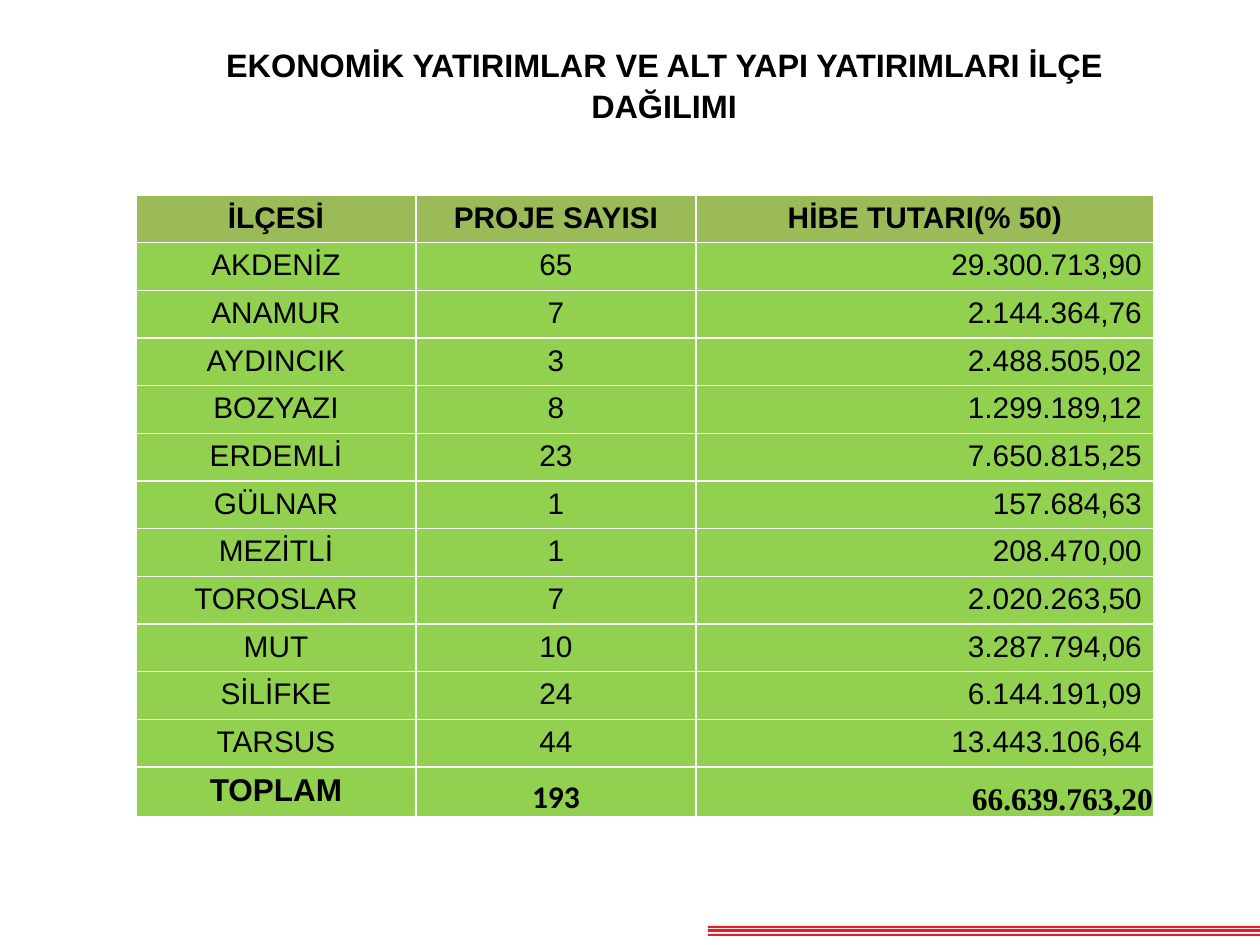
from dataclasses import dataclass

from pptx import Presentation
from pptx.dml.color import RGBColor
from pptx.enum.text import MSO_ANCHOR, PP_ALIGN
from pptx.util import Emu, Pt

CENTER, RIGHT = PP_ALIGN.CENTER, PP_ALIGN.RIGHT
TOP, BOTTOM = MSO_ANCHOR.TOP, MSO_ANCHOR.BOTTOM
BLANK_LAYOUT = 6
EMU_PER_PX = 914400 / 126


@dataclass(frozen=True)
class Theme:
    text: RGBColor = RGBColor(0x00, 0x00, 0x00)
    header_fill: RGBColor = RGBColor(0x9B, 0xBB, 0x59)
    body_fill: RGBColor = RGBColor(0x92, 0xD0, 0x50)
    stripe: RGBColor = RGBColor(0xE3, 0x1F, 0x24)
    font: str = "Arial"
    total_fonts: tuple = ("Arial", "Calibri", "Times New Roman")
    title_size: float = 18.5
    table_size: float = 17
    total_size: float = 18


THEME = Theme()

TITLE = "EKONOMİK YATIRIMLAR VE ALT YAPI YATIRIMLARI İLÇE DAĞILIMI"
HEADER = ("İLÇESİ", "PROJE SAYISI", "HİBE TUTARI(% 50)")
DISTRICTS = [
    ("AKDENİZ", "65", "29.300.713,90"),
    ("ANAMUR", "7", "2.144.364,76"),
    ("AYDINCIK", "3", "2.488.505,02"),
    ("BOZYAZI", "8", "1.299.189,12"),
    ("ERDEMLİ", "23", "7.650.815,25"),
    ("GÜLNAR", "1", "157.684,63"),
    ("MEZİTLİ", "1", "208.470,00"),
    ("TOROSLAR", "7", "2.020.263,50"),
    ("MUT", "10", "3.287.794,06"),
    ("SİLİFKE", "24", "6.144.191,09"),
    ("TARSUS", "44", "13.443.106,64"),
]
TOTAL = ("TOPLAM", "193", "66.639.763,20")


def px(length):
    return Emu(round(length * EMU_PER_PX))


def set_text(frame, text, size, font=THEME.font, bold=False, align=CENTER):
    paragraph = frame.paragraphs[0]
    paragraph.text = text
    paragraph.alignment = align
    paragraph.font.name = font
    paragraph.font.size = Pt(size)
    paragraph.font.bold = bold
    paragraph.font.color.rgb = THEME.text
    return paragraph


def add_stripes(slide, left, top, width):
    """Three thin stripes drawn as one outline shape."""
    bands = ((0, 2), (3, 3), (8, 2))  # offset and thickness
    right = left + width
    builder = slide.shapes.build_freeform(left, top, scale=EMU_PER_PX)
    for offset, thickness in bands:
        upper, lower = top + offset, top + offset + thickness
        if offset:
            builder.move_to(left, upper)
        builder.add_line_segments([(right, upper), (right, lower), (left, lower)], close=True)
    shape = builder.convert_to_shape()
    shape.shadow.inherit = False
    shape.fill.solid()
    shape.fill.fore_color.rgb = THEME.stripe
    shape.line.fill.background()


def add_title(slide, left, top, width, height):
    frame = slide.shapes.add_textbox(px(left), px(top), px(width), px(height)).text_frame
    frame.word_wrap = True
    paragraph = set_text(frame, TITLE, THEME.title_size, bold=True)
    paragraph.line_spacing = 1.05


def fill_cell(cell, fill, margins, anchor=TOP):
    cell.fill.solid()
    cell.fill.fore_color.rgb = fill
    cell.margin_left = cell.margin_right = px(margins[0])
    cell.margin_top, cell.margin_bottom = px(margins[1]), px(margins[2])
    cell.vertical_anchor = anchor


def add_district_table(slide, left, top, width, height):
    rows = [HEADER, *DISTRICTS, TOTAL]
    last = len(rows) - 1
    total_height = 50
    table = slide.shapes.add_table(
        len(rows), len(HEADER), px(left), px(top), px(width), px(height)).table

    # Two equal narrow columns, the amounts take the rest
    narrow = 280
    for column, column_width in zip(table.columns, (narrow, narrow, width - 2 * narrow)):
        column.width = px(column_width)
    for row in table.rows:
        row.height = px((height - total_height) / last)
    table.rows[last].height = px(total_height)

    for row_index, values in enumerate(rows):
        is_header, is_total = row_index == 0, row_index == last
        fill = THEME.header_fill if is_header else THEME.body_fill
        size = THEME.total_size if is_total else THEME.table_size
        for column_index, value in enumerate(values):
            cell = table.cell(row_index, column_index)
            if is_total and column_index > 0:
                fill_cell(cell, fill, (1, 1, 0), BOTTOM)
            else:
                fill_cell(cell, fill, (12, 6, 6))
            font = THEME.total_fonts[column_index] if is_total else THEME.font
            align = RIGHT if column_index == 2 and not is_header else CENTER
            set_text(cell.text_frame, value, size, font, is_header or is_total, align)


def main():
    presentation = Presentation()
    presentation.slide_width, presentation.slide_height = px(1260), px(945)
    slide = presentation.slides.add_slide(presentation.slide_layouts[BLANK_LAYOUT])
    add_stripes(slide, 708, 926, 552)
    add_title(slide, 194, 37, 940, 130)
    add_district_table(slide, 136, 195, 1018, 618)
    presentation.save("out.pptx")


if __name__ == "__main__":
    main()
